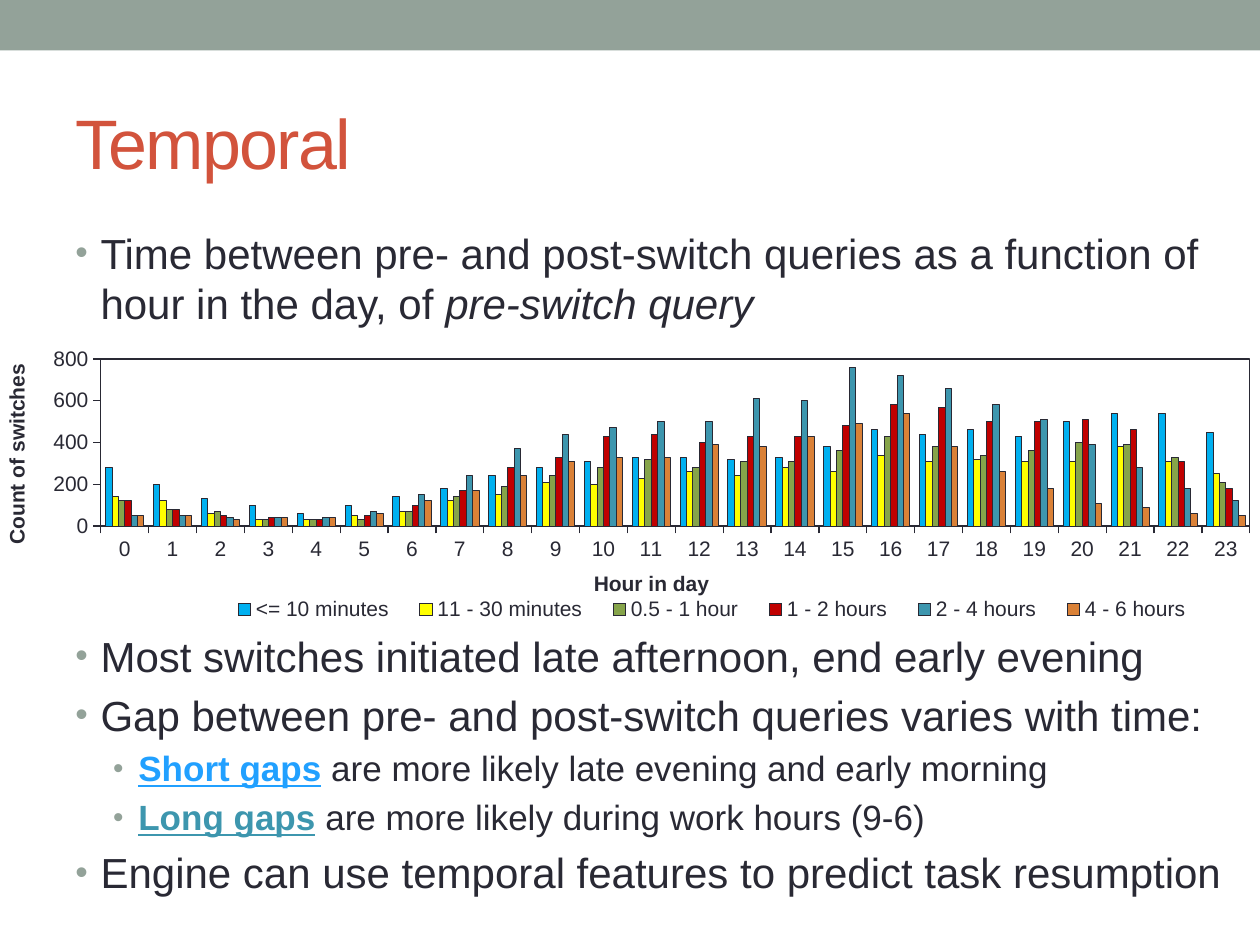
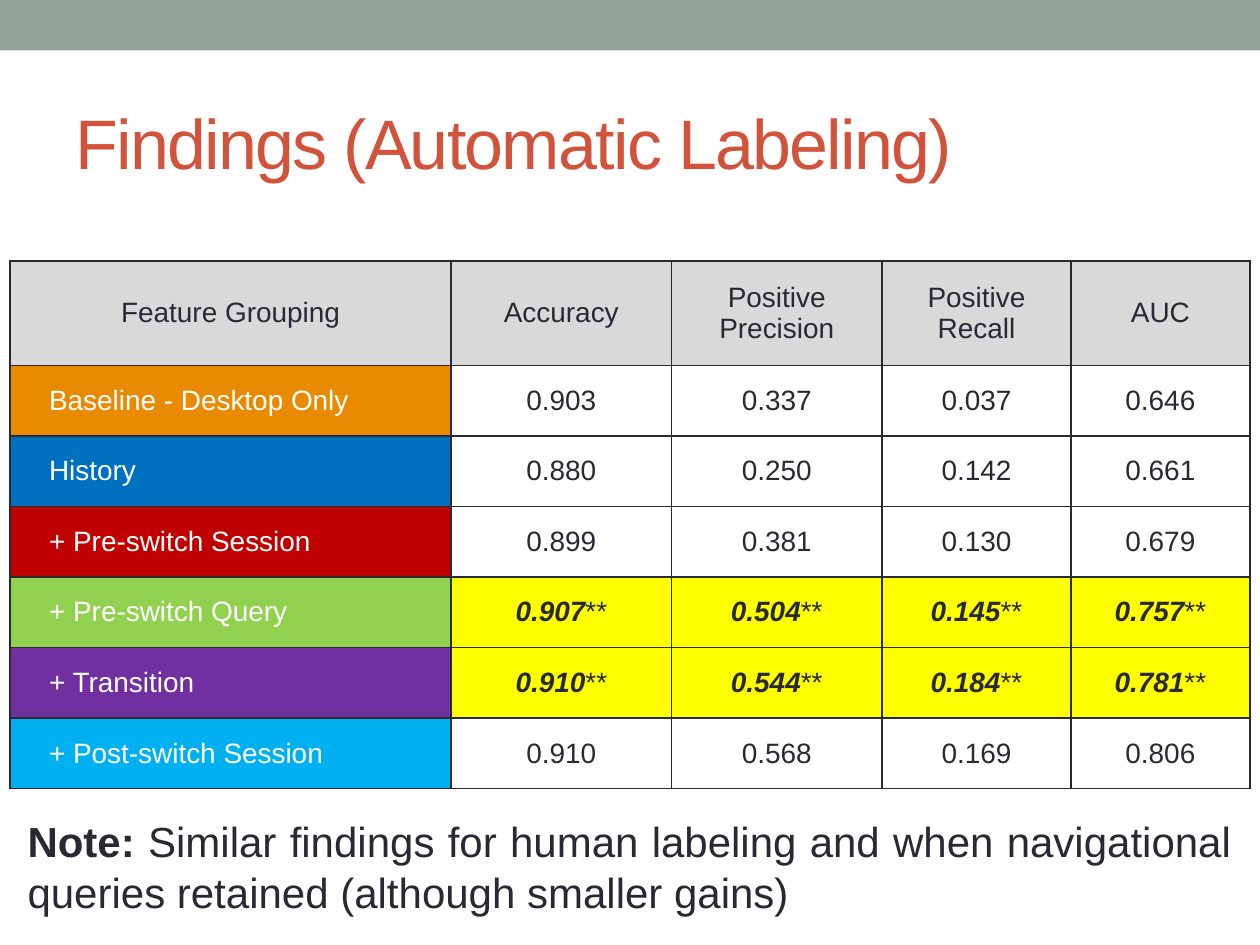
from lxml.etree import SubElement
from pptx import Presentation
from pptx.chart.data import CategoryChartData
from pptx.dml.color import RGBColor
from pptx.enum.chart import XL_CHART_TYPE, XL_LEGEND_POSITION, XL_TICK_MARK
from pptx.enum.shapes import MSO_SHAPE
from pptx.enum.text import MSO_ANCHOR, PP_ALIGN
from pptx.oxml import parse_xml
from pptx.oxml.ns import nsdecls, qn
from pptx.util import Inches, Pt

FONT = "Arial"
COLORS = {
    "band": "93A299", "title": "D2533C", "text": "292934", "white": "FFFFFF",
    "short": "21A0FF", "long": "3D96AE", "header": "D9D9D9", "highlight": "FFFF00",
    "orange": "E88B02", "blue": "0070C0", "red": "C00000", "green": "92D050",
    "purple": "7030A0", "sky": "00B0F0", "olive": "86A44A", "copper": "DA8137",
}

INTRO = [
    (0, [("Time between pre- and post-switch queries as a function of hour in the day, of ", {}),
         ("pre-switch query", {"italic": True})]),
]
CONCLUSIONS = [
    (0, [("Most switches initiated late afternoon, end early evening", {})]),
    (0, [("Gap between pre- and post-switch queries varies with time:", {})]),
    (1, [("Short gaps", {"color": "short", "bold": True, "underline": True}),
         (" are more likely late evening and early morning", {})]),
    (1, [("Long gaps", {"color": "long", "bold": True, "underline": True}),
         (" are more likely during work hours (9-6)", {})]),
    (0, [("Engine can use temporal features to predict task resumption", {})]),
]
BULLET_LEVELS = [(24, 0.2), (20, 0.5)]  # text size, left margin

SWITCH_COUNTS = [
    ("<= 10 minutes", "sky",
     [280, 200, 130, 100, 60, 100, 140, 180, 240, 280, 310, 330,
      330, 320, 330, 380, 460, 440, 460, 430, 500, 540, 540, 450]),
    ("11 - 30 minutes", "highlight",
     [140, 120, 60, 30, 30, 50, 70, 120, 150, 210, 200, 230,
      260, 240, 280, 260, 340, 310, 320, 310, 310, 380, 310, 250]),
    ("0.5 - 1 hour", "olive",
     [120, 80, 70, 30, 30, 30, 70, 140, 190, 240, 280, 320,
      280, 310, 310, 360, 430, 380, 340, 360, 400, 390, 330, 210]),
    ("1 - 2 hours", "red",
     [120, 80, 50, 40, 30, 50, 100, 170, 280, 330, 430, 440,
      400, 430, 430, 480, 580, 570, 500, 500, 510, 460, 310, 180]),
    ("2 - 4 hours", "long",
     [50, 50, 40, 40, 40, 70, 150, 240, 370, 440, 470, 500,
      500, 610, 600, 760, 720, 660, 580, 510, 390, 280, 180, 120]),
    ("4 - 6 hours", "copper",
     [50, 50, 30, 40, 40, 60, 120, 170, 240, 310, 330, 330,
      390, 380, 430, 490, 540, 380, 260, 180, 110, 90, 60, 50]),
]

FINDINGS_HEADER = ["Feature Grouping", "Accuracy", "Positive Precision", "Positive Recall", "AUC"]
FINDINGS = [  # label, label colour, values, significant
    ("Baseline - Desktop Only", "orange", ["0.903", "0.337", "0.037", "0.646"], False),
    ("History", "blue", ["0.880", "0.250", "0.142", "0.661"], False),
    ("+ Pre-switch Session", "red", ["0.899", "0.381", "0.130", "0.679"], False),
    ("+ Pre-switch Query", "green", ["0.907", "0.504", "0.145", "0.757"], True),
    ("+ Transition", "purple", ["0.910", "0.544", "0.184", "0.781"], True),
    ("+ Post-switch Session", "sky", ["0.910", "0.568", "0.169", "0.806"], False),
]
COLUMN_WIDTHS = [3.5, 1.75, 1.67, 1.5, 1.42]
HEADER_HEIGHT, ROW_HEIGHT = 0.83, 0.56


def rgb(name):
    return RGBColor.from_string(COLORS[name])


def style_font(font, size, color="text", bold=False, italic=False, underline=False):
    font.name, font.size = FONT, Pt(size)
    font.bold, font.italic, font.underline = bold, italic, underline
    font.color.rgb = rgb(color)


def add_run(paragraph, text, size, **style):
    run = paragraph.add_run()
    run.text = text
    style_font(run.font, size, **style)
    return run


def style_line(line, width):
    line.color.rgb = rgb("text")
    line.width = Pt(width)


def add_text_frame(slide, box):
    frame = slide.shapes.add_textbox(*map(Inches, box)).text_frame
    frame.word_wrap = True
    return frame


def set_line_height(paragraph, size):
    paragraph.line_spacing = Pt(round(size * 1.2))


def add_titled_slide(presentation, title):
    slide = presentation.slides.add_slide(presentation.slide_layouts[6])
    band = slide.shapes.add_shape(MSO_SHAPE.RECTANGLE, 0, 0, presentation.slide_width, Inches(0.4))
    band.shadow.inherit = False
    band.fill.solid()
    band.fill.fore_color.rgb = rgb("band")
    band.line.fill.background()
    frame = add_text_frame(slide, (0.5, 0.58, 9, 1.08))
    frame.vertical_anchor = MSO_ANCHOR.MIDDLE
    set_line_height(frame.paragraphs[0], 40)
    run = add_run(frame.paragraphs[0], title, 40, color="title")
    run.font._element.set("spc", "-100")
    return slide


def add_bullets(slide, box, items):
    frame = add_text_frame(slide, box)
    for index, (level, runs) in enumerate(items):
        paragraph = frame.add_paragraph() if index else frame.paragraphs[0]
        size, margin = BULLET_LEVELS[level]
        paragraph.level = level
        paragraph.space_before = Pt(size * 0.2)
        set_line_height(paragraph, size)
        properties = paragraph._p.get_or_add_pPr()
        properties.set("marL", str(Inches(margin)))
        properties.set("indent", str(Inches(-0.2)))
        bullet_color = SubElement(properties, qn("a:buClr"))
        SubElement(bullet_color, qn("a:srgbClr"), val=COLORS["band"])
        SubElement(properties, qn("a:buSzPct"), val="85000")
        SubElement(properties, qn("a:buFont"), typeface=FONT)
        SubElement(properties, qn("a:buChar"), char="•")
        for text, style in runs:
            add_run(paragraph, text, size, **style)


def set_manual_layout(element, position, box, inner=False):
    """Fix a chart part at fractions of the chart area."""
    for automatic in element.findall(qn("c:layout")):
        element.remove(automatic)
    layout = parse_xml(f"<c:layout {nsdecls('c')}><c:manualLayout/></c:layout>")
    manual = layout[0]
    if inner:
        SubElement(manual, qn("c:layoutTarget"), val="inner")
    for mode in ("xMode", "yMode"):
        SubElement(manual, qn(f"c:{mode}"), val="edge")
    for key, value in zip("xywh", box):
        SubElement(manual, qn(f"c:{key}"), val=str(value))
    element.insert(position, layout)


def style_axis(axis, title):
    axis.has_major_gridlines = False
    axis.major_tick_mark = XL_TICK_MARK.OUTSIDE
    axis.minor_tick_mark = XL_TICK_MARK.NONE
    style_line(axis.format.line, 0.75)
    add_run(axis.axis_title.text_frame.paragraphs[0], title, 12, bold=True)


def add_switch_chart(slide, box):
    data = CategoryChartData()
    data.categories = [str(hour) for hour in range(24)]
    for name, _, counts in SWITCH_COUNTS:
        data.add_series(name, counts)
    chart = slide.shapes.add_chart(XL_CHART_TYPE.COLUMN_CLUSTERED, *map(Inches, box), data).chart
    style_font(chart.font, 12)
    chart.has_title = False
    style_axis(chart.category_axis, "Hour in day")
    style_axis(chart.value_axis, "Count of switches")
    chart.value_axis.minimum_scale, chart.value_axis.maximum_scale = 0, 800
    chart.value_axis.major_unit = 200

    plot = chart.plots[0]
    plot.gap_width, plot.overlap, plot.vary_by_categories = 150, 0, False
    for series, (_, color, _) in zip(plot.series, SWITCH_COUNTS):
        series.format.fill.solid()
        series.format.fill.fore_color.rgb = rgb(color)
        style_line(series.format.line, 0.5)

    chart.has_legend = True
    chart.legend.position = XL_LEGEND_POSITION.BOTTOM
    chart.legend.include_in_layout = False
    set_manual_layout(chart.legend._element, 1, (0.17, 0.88, 0.79, 0.1))
    plot_area = chart._chartSpace.find(f".//{qn('c:plotArea')}")
    set_manual_layout(plot_area, 0, (0.08, 0.077, 0.912, 0.569), inner=True)
    plot_area.append(parse_xml(
        f'<c:spPr {nsdecls("c", "a")}><a:noFill/><a:ln w="{Pt(0.75)}"><a:solidFill>'
        f'<a:srgbClr val="{COLORS["text"]}"/></a:solidFill></a:ln></c:spPr>'))


def style_cell(cell, fill=None):
    cell.vertical_anchor = MSO_ANCHOR.MIDDLE
    cell.margin_left = cell.margin_right = Inches(0.31)
    cell.margin_top = cell.margin_bottom = 0
    if fill:
        cell.fill.solid()
        cell.fill.fore_color.rgb = rgb(fill)
    else:
        cell.fill.background()
    properties = cell._tc.get_or_add_tcPr()
    for position, side in enumerate("LRTB"):
        properties.insert(position, parse_xml(
            f'<a:ln{side} {nsdecls("a")} w="{Pt(1)}"><a:solidFill>'
            f'<a:srgbClr val="{COLORS["text"]}"/></a:solidFill></a:ln{side}>'))


def fill_cell(cell, text, fill=None, color="text", align=PP_ALIGN.CENTER, significant=False):
    style_cell(cell, fill)
    paragraph = cell.text_frame.paragraphs[0]
    paragraph.alignment = align
    add_run(paragraph, text, 16, color=color, bold=significant, italic=significant)
    if significant:
        add_run(paragraph, "**", 16, color=color)


def add_findings_table(slide, left, top):
    height = HEADER_HEIGHT + ROW_HEIGHT * len(FINDINGS)
    table = slide.shapes.add_table(
        len(FINDINGS) + 1, len(COLUMN_WIDTHS),
        *map(Inches, (left, top, sum(COLUMN_WIDTHS), height))).table
    table.first_row = table.horz_banding = False
    for column, width in zip(table.columns, COLUMN_WIDTHS):
        column.width = Inches(width)
    for index, row in enumerate(table.rows):
        row.height = Inches(ROW_HEIGHT if index else HEADER_HEIGHT)
    for column, heading in enumerate(FINDINGS_HEADER):
        fill_cell(table.cell(0, column), heading, "header")
    for row, (label, color, values, significant) in enumerate(FINDINGS, 1):
        fill_cell(table.cell(row, 0), label, color, "white", PP_ALIGN.LEFT)
        for column, value in enumerate(values, 1):
            fill_cell(table.cell(row, column), value,
                      "highlight" if significant else None, significant=significant)


def add_note(slide, box):
    paragraph = add_text_frame(slide, box).paragraphs[0]
    paragraph.alignment = PP_ALIGN.JUSTIFY
    set_line_height(paragraph, 24)
    add_run(paragraph, "Note: ", 24, bold=True)
    add_run(paragraph, "Similar findings for human labeling and when navigational "
                       "queries retained (although smaller gains)", 24)


def build_temporal_slide(presentation):
    slide = add_titled_slide(presentation, "Temporal")
    add_bullets(slide, (0.5, 1.75, 9.5, 0.92), INTRO)
    add_bullets(slide, (0.5, 4.95, 9.5, 2.38), CONCLUSIONS)
    add_switch_chart(slide, (0, 2.67, 10, 2.33))


def build_findings_slide(presentation):
    slide = add_titled_slide(presentation, "Findings (Automatic Labeling)")
    add_findings_table(slide, 0.08, 2.07)
    add_note(slide, (0.12, 6.42, 9.75, 0.91))


def main():
    presentation = Presentation()
    presentation.slide_width, presentation.slide_height = Inches(10), Inches(7.5)
    build_temporal_slide(presentation)
    build_findings_slide(presentation)
    presentation.save("out.pptx")


if __name__ == "__main__":
    main()
